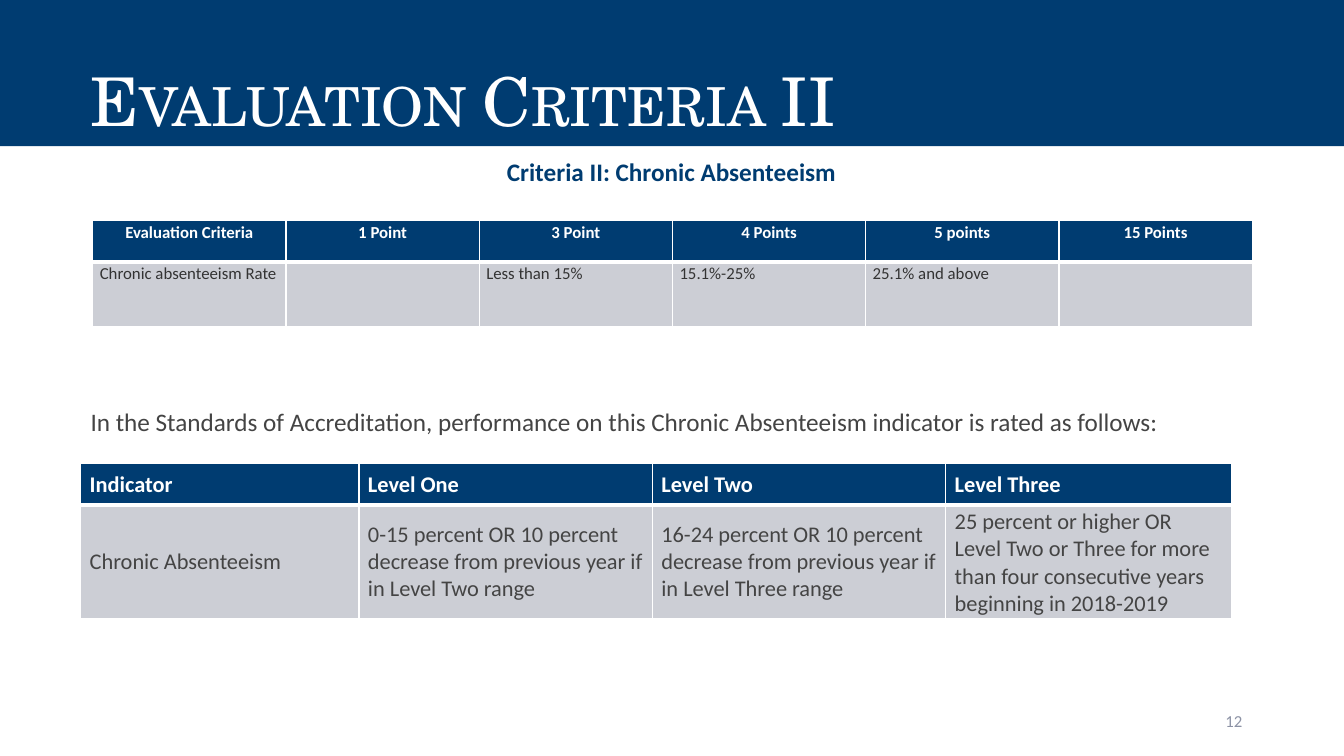
from dataclasses import dataclass

from lxml import etree
from pptx import Presentation
from pptx.dml.color import RGBColor
from pptx.enum.text import MSO_ANCHOR, PP_ALIGN
from pptx.oxml.ns import qn
from pptx.util import Inches, Pt

LEFT, CENTER, RIGHT = PP_ALIGN.LEFT, PP_ALIGN.CENTER, PP_ALIGN.RIGHT
TOP, MIDDLE, BOTTOM = MSO_ANCHOR.TOP, MSO_ANCHOR.MIDDLE, MSO_ANCHOR.BOTTOM
TITLE_ONLY = 5


@dataclass(frozen=True)
class Theme:
    heading_font: str = "TeX Gyre Schola"
    body_font: str = "Calibri"
    navy: str = "003C71"
    white: str = "FFFFFF"
    cell_grey: str = "CCCED5"
    dark: str = "333333"
    text: str = "444444"
    muted: str = "8C92A5"
    title_size: int = 48
    lead_size: int = 18
    levels_size: int = 16
    small_size: int = 12


@dataclass(frozen=True)
class TableStyle:
    size: int
    body_color: str
    header_align: PP_ALIGN
    anchor: MSO_ANCHOR
    spacing: float
    side_margin: float
    header_margin: float
    body_margin: float


class CriteriaSlide:
    def __init__(self, slide, theme):
        self.slide = slide
        self.theme = theme

    def add_text_run(self, frame, text, size, color, bold=False, align=LEFT,
                     font=None, spacing=1.0):
        paragraph = frame.paragraphs[0]
        paragraph.alignment = align
        paragraph.line_spacing = spacing
        run = paragraph.add_run()
        run.text = text
        run.font.name = font or self.theme.body_font
        run.font.size = Pt(size)
        run.font.bold = bold
        run.font.color.rgb = RGBColor.from_string(color)
        return run

    def title_band(self, text, width, height):
        band = self.slide.shapes.title
        band.left, band.top = Inches(0), Inches(0)
        band.width, band.height = Inches(width), Inches(height)
        band.fill.solid()
        band.fill.fore_color.rgb = RGBColor.from_string(self.theme.navy)
        frame = band.text_frame
        frame.word_wrap = True
        frame.vertical_anchor = BOTTOM
        frame.margin_left = Inches(0.9)
        run = self.add_text_run(frame, text, self.theme.title_size,
                                self.theme.white, spacing=0.9,
                                font=self.theme.heading_font)
        run.font._element.set("cap", "small")

    def text(self, text, box, size, color, bold=False, align=LEFT, anchor=TOP):
        frame = self.slide.shapes.add_textbox(*map(Inches, box)).text_frame
        frame.word_wrap = True
        frame.vertical_anchor = anchor
        self.add_text_run(frame, text, size, color, bold, align)

    def borders(self, cell, bottom_width):
        properties = cell._tc.get_or_add_tcPr()
        edges = {"lnL": 1, "lnR": 1, "lnT": 1, "lnB": bottom_width}
        for position, (edge, width) in enumerate(edges.items()):
            line = etree.Element(qn(f"a:{edge}"), w=str(Pt(width)))
            fill = etree.SubElement(line, qn("a:solidFill"))
            etree.SubElement(fill, qn("a:srgbClr"), val=self.theme.white)
            properties.insert(position, line)

    def table(self, rows, left, top, widths, heights, style):
        table = self.slide.shapes.add_table(
            len(rows), len(widths), Inches(left), Inches(top),
            Inches(sum(widths)), Inches(sum(heights))).table
        table.horz_banding = False
        for column, width in zip(table.columns, widths):
            column.width = Inches(width)
        for r, (values, height) in enumerate(zip(rows, heights)):
            table.rows[r].height = Inches(height)
            for c, value in enumerate(values):
                self.cell(table.cell(r, c), value, style, header=r == 0)

    def cell(self, cell, value, style, header):
        theme = self.theme
        cell.fill.solid()
        cell.fill.fore_color.rgb = RGBColor.from_string(
            theme.navy if header else theme.cell_grey)
        cell.vertical_anchor = style.anchor
        cell.margin_left = cell.margin_right = Inches(style.side_margin)
        cell.margin_top = cell.margin_bottom = Inches(
            style.header_margin if header else style.body_margin)
        self.borders(cell, bottom_width=3 if header else 1)
        if value:
            self.add_text_run(cell.text_frame, value, style.size,
                              theme.white if header else style.body_color,
                              header, style.header_align if header else LEFT,
                              spacing=style.spacing)


def main():
    theme = Theme()
    deck = Presentation()
    deck.slide_width, deck.slide_height = Inches(13.33), Inches(7.5)
    page = CriteriaSlide(
        deck.slides.add_slide(deck.slide_layouts[TITLE_ONLY]), theme)

    page.title_band("Evaluation Criteria II", 13.33, 1.45)
    page.text("12", (9.42, 6.95, 3, 0.4), theme.small_size, theme.muted,
              align=RIGHT, anchor=MIDDLE)

    points = [
        ["Evaluation Criteria", "1 Point", "3 Point", "4 Points", "5 points",
         "15 Points"],
        ["Chronic absenteeism Rate", "", "Less than 15%", "15.1%-25%",
         "25.1% and above", ""],
    ]
    points_style = TableStyle(theme.small_size, theme.dark, CENTER, TOP,
                              1.07, 0.07, 0, 0)
    page.table(points, 0.92, 2.19, [11.5 / 6] * 6, [0.41, 0.64], points_style)

    levels = [
        ["Indicator", "Level One", "Level Two", "Level Three"],
        ["Chronic Absenteeism",
         "0-15 percent OR 10 percent decrease from previous year "
         "if in Level Two range",
         "16-24 percent OR 10 percent decrease from previous year "
         "if in Level Three range",
         "25 percent or higher OR Level Two or Three for more than four "
         "consecutive years beginning in 2018-2019"],
    ]
    levels_style = TableStyle(theme.levels_size, theme.text, LEFT, MIDDLE,
                              1.0, 0.09, 0.06, 0.03)
    page.table(levels, 0.8, 4.6, [2.76, 2.91, 2.91, 2.84], [0.41, 1.13],
               levels_style)

    page.text("In the Standards of Accreditation, performance on this Chronic "
              "Absenteeism indicator is rated as follows:",
              (0.8, 3.98, 11.42, 0.4), theme.lead_size, theme.text)
    page.text("Criteria II: Chronic Absenteeism", (3.33, 1.5, 6.66, 0.71),
              theme.lead_size, theme.navy, bold=True, align=CENTER)

    deck.save("out.pptx")


if __name__ == "__main__":
    main()
